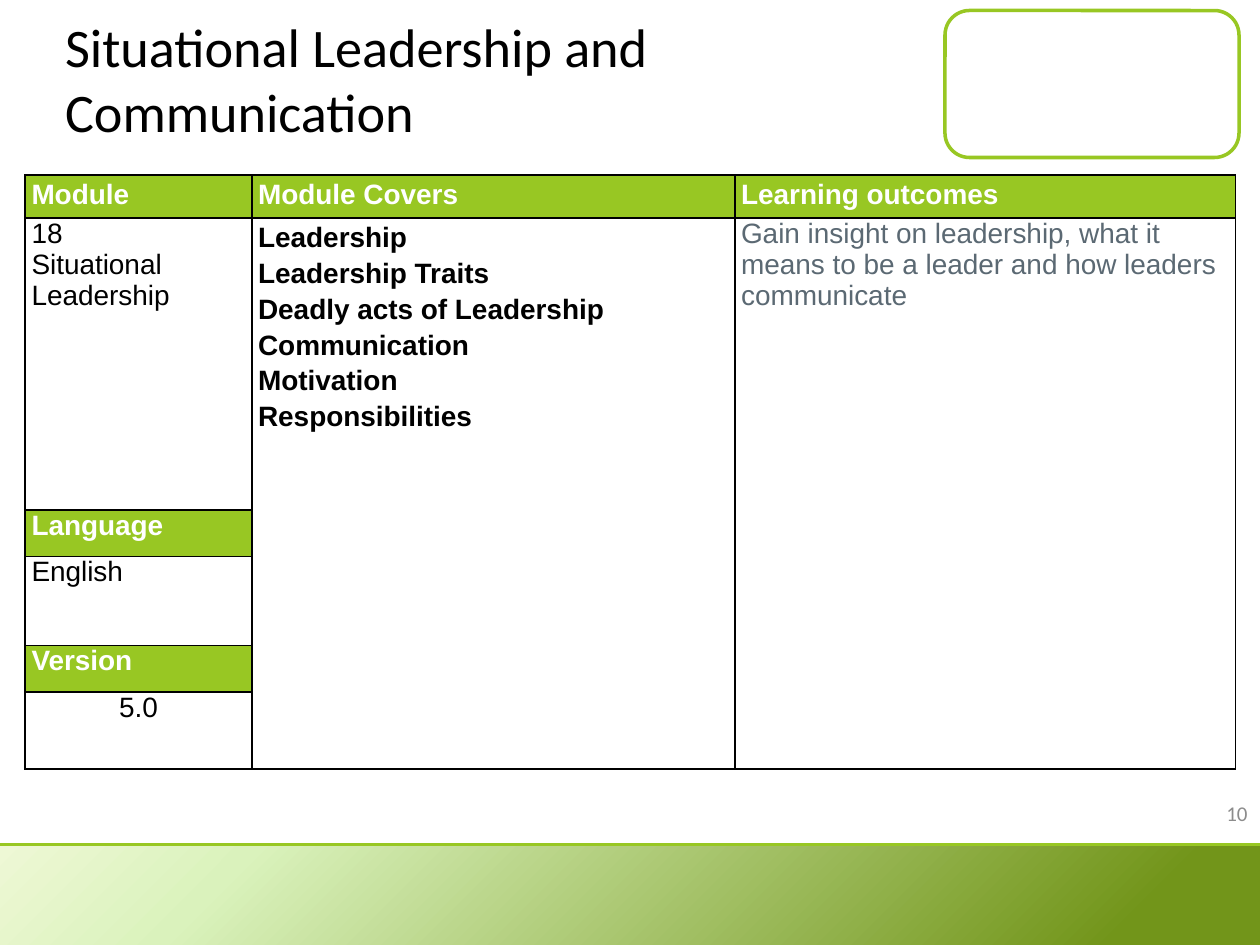
from dataclasses import dataclass

from lxml import etree
from pptx import Presentation
from pptx.dml.color import RGBColor
from pptx.enum import shapes, text
from pptx.oxml import ns
from pptx.util import Pt

GREEN = RGBColor(0x98, 0xC7, 0x23)
WHITE = RGBColor(0xFF, 0xFF, 0xFF)
BLACK = RGBColor(0, 0, 0)
SLATE = RGBColor(0x5B, 0x69, 0x73)
GREY = RGBColor(0x8C, 0x8C, 0x8C)
BAND_STOPS = [(0, "EEF8D5"), (19, "DAF2BC"), (89, "72951A")]

WIDTH, HEIGHT = 720, 540
BAND_TOP = 483
COLUMNS = [129.5, 276, 286]
ROWS = [24.5, 167, 26.5, 51, 26.5, 44]


@dataclass
class CellText:
    row: int
    column: int
    lines: list[str]
    color: RGBColor = BLACK
    bold: bool = False
    spacing: float = 1.0
    align: text.PP_ALIGN = text.PP_ALIGN.LEFT
    fill: RGBColor | None = None


def header(row: int, column: int, label: str, spacing: float = 1.0) -> CellText:
    return CellText(row, column, [label], WHITE, True, spacing, fill=GREEN)


CELLS = [
    header(0, 0, "Module", 1.15),
    header(0, 1, "Module Covers", 1.15),
    header(0, 2, "Learning outcomes", 1.15),
    CellText(1, 0, ["18", "Situational Leadership"]),
    CellText(1, 1, ["Leadership", "Leadership Traits", "Deadly acts of Leadership",
                    "Communication", "Motivation", "Responsibilities"],
             bold=True, spacing=1.15),
    CellText(1, 2, ["Gain insight on leadership, what it means to be a leader "
                    "and how leaders communicate"], SLATE),
    header(2, 0, "Language"),
    CellText(3, 0, ["English"]),
    header(4, 0, "Version"),
    CellText(5, 0, ["5.0"], align=text.PP_ALIGN.CENTER),
]


def style_font(font, name: str, size: float, color: RGBColor, bold: bool = False) -> None:
    font.name = name
    font.size = Pt(size)
    font.bold = bold
    font.color.rgb = color


def add_frame(page) -> None:
    """Rounded frame at the top right and gradient band at the bottom."""
    frame = page.shapes.add_shape(shapes.MSO_SHAPE.ROUNDED_RECTANGLE,
                                  Pt(540), Pt(6), Pt(168), Pt(84))
    frame.shadow.inherit = False
    frame.fill.solid()
    frame.fill.fore_color.rgb = WHITE
    frame.line.color.rgb = GREEN
    frame.line.width = Pt(2)

    band = page.shapes.add_shape(shapes.MSO_SHAPE.RECTANGLE, 0, Pt(BAND_TOP),
                                 Pt(WIDTH), Pt(HEIGHT - BAND_TOP))
    band.shadow.inherit = False
    band.line.fill.background()
    band.fill.gradient()
    band.fill.gradient_angle = 315
    stops = band._element.spPr.find(ns.qn("a:gradFill")).find(ns.qn("a:gsLst"))
    for stop in list(stops):
        stops.remove(stop)
    for percent, color in BAND_STOPS:
        stop = etree.SubElement(stops, ns.qn("a:gs"), pos=str(percent * 1000))
        etree.SubElement(stop, ns.qn("a:srgbClr"), val=color)

    rule = page.shapes.add_connector(shapes.MSO_CONNECTOR.STRAIGHT, 0, Pt(BAND_TOP - 0.6),
                                     Pt(WIDTH), Pt(BAND_TOP - 0.6))
    rule.line.color.rgb = GREEN
    rule.line.width = Pt(1.5)
    etree.SubElement(rule._element.spPr, ns.qn("a:effectLst"))


def add_borders(cell) -> None:
    properties = cell._tc.get_or_add_tcPr()
    for index, side in enumerate(("lnL", "lnR", "lnT", "lnB")):
        line = etree.Element(ns.qn(f"a:{side}"), w=str(Pt(1)))
        fill = etree.SubElement(line, ns.qn("a:solidFill"))
        etree.SubElement(fill, ns.qn("a:srgbClr"), val=str(BLACK))
        properties.insert(index, line)


def fill_cell(cell, content: CellText) -> None:
    if content.fill is not None:
        cell.fill.solid()
        cell.fill.fore_color.rgb = content.fill
    cell.text = "\n".join(content.lines)
    for para in cell.text_frame.paragraphs:
        para.alignment = content.align
        para.line_spacing = content.spacing
        style_font(para.font, "Arial", 16, content.color, content.bold)


def add_module_table(page) -> None:
    table = page.shapes.add_table(len(ROWS), len(COLUMNS), Pt(14.4), Pt(100),
                                  Pt(sum(COLUMNS)), Pt(sum(ROWS))).table
    table.first_row = table.horz_banding = False
    for column, width in zip(table.columns, COLUMNS):
        column.width = Pt(width)
    for row, height in zip(table.rows, ROWS):
        row.height = Pt(height)
    for column in (1, 2):
        table.cell(1, column).merge(table.cell(len(ROWS) - 1, column))
    for cell in table.iter_cells():
        cell.margin_left = cell.margin_right = Pt(3.6)
        cell.margin_top = cell.margin_bottom = 0
        cell.fill.background()
        add_borders(cell)
    for content in CELLS:
        fill_cell(table.cell(content.row, content.column), content)


def add_title(page) -> None:
    title = page.shapes.title
    title.left, title.top, title.width, title.height = Pt(30), 0, Pt(486), Pt(90)
    title.text_frame.text = "Situational Leadership and Communication"
    title.text_frame.vertical_anchor = text.MSO_ANCHOR.MIDDLE
    para = title.text_frame.paragraphs[0]
    para.alignment = text.PP_ALIGN.LEFT
    style_font(para.font, "Calibri", 31, BLACK)


def add_page_number(page) -> None:
    box = page.shapes.add_textbox(Pt(552), Pt(450), Pt(168), Pt(28.8))
    box.text_frame.word_wrap = True
    box.text_frame.vertical_anchor = text.MSO_ANCHOR.MIDDLE
    para = box.text_frame.paragraphs[0]
    para.text = "10"
    para.alignment = text.PP_ALIGN.RIGHT
    style_font(para.font, "Calibri", 12, GREY)


def main() -> None:
    deck = Presentation()
    deck.slide_width, deck.slide_height = Pt(WIDTH), Pt(HEIGHT)
    page = deck.slides.add_slide(deck.slide_layouts.get_by_name("Title Only"))
    add_frame(page)
    add_title(page)
    add_page_number(page)
    add_module_table(page)
    deck.save("out.pptx")


if __name__ == "__main__":
    main()
